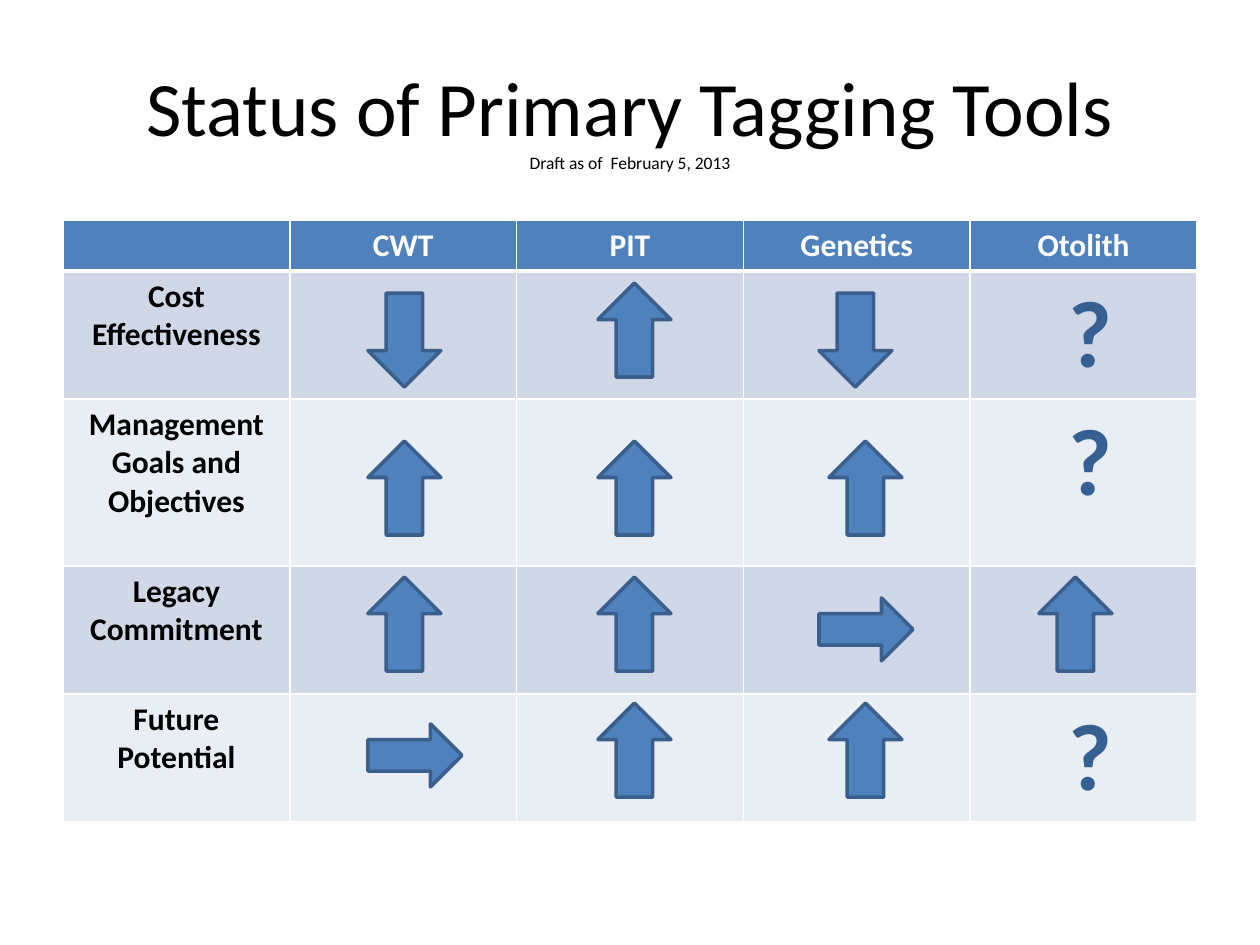
from lxml import etree
from pptx import Presentation
from pptx.dml.color import RGBColor
from pptx.enum.shapes import MSO_SHAPE
from pptx.enum.text import MSO_ANCHOR, MSO_AUTO_SIZE, PP_ALIGN
from pptx.oxml.ns import qn
from pptx.util import Pt

TITLE = "Status of Primary Tagging Tools"
DRAFT_NOTE = "Draft as of  February 5, 2013"
TOOLS = ["", "CWT", "PIT", "Genetics", "Otolith"]
STATUS = [
    ("Cost Effectiveness", ["down", "up", "down", "?"]),
    ("Management Goals and Objectives", ["up", "up", "up", "?"]),
    ("Legacy Commitment", ["up", "up", "right", "up"]),
    ("Future Potential", ["right", "up", "up", "?"]),
]

UP = MSO_SHAPE.UP_ARROW
DOWN = MSO_SHAPE.DOWN_ARROW
RIGHT = MSO_SHAPE.RIGHT_ARROW
CENTER = PP_ALIGN.CENTER
TOP = MSO_ANCHOR.TOP
MIDDLE = MSO_ANCHOR.MIDDLE
NO_AUTOFIT = MSO_AUTO_SIZE.NONE

BLACK = RGBColor(0x00, 0x00, 0x00)
WHITE = RGBColor(0xFF, 0xFF, 0xFF)
BLUE = RGBColor(0x4F, 0x81, 0xBD)
OUTLINE = RGBColor(0x3A, 0x5F, 0x8C)
QUESTION = RGBColor(0x37, 0x60, 0x92)
BANDS = [RGBColor(0xD0, 0xD8, 0xE8), RGBColor(0xE9, 0xED, 0xF4)]

FONT = "Calibri"
EMU_PER_PX = 914400 / 126
TABLE_LEFT, TABLE_TOP, TABLE_WIDTH = 63, 220, 1134
ROW_HEIGHTS = [51, 128, 167, 128, 128]
ARROW_LEFTS = [368, 598, 829, 1039]
ARROW_TOPS = [283, 441, 577, 703]
QUESTION_INDENT = 27
SIDEWAYS_SHIFT = {("Genetics", "down"): -10, ("Genetics", "right"): -10}
ARROWS = {
    "up": (UP, 73, 94, 0),
    "down": (DOWN, 73, 94, 10),
    "right": (RIGHT, 94, 63, 21),
}


def px(length):
    return round(length * EMU_PER_PX)


def style(run, size, color, bold=False):
    run.font.name = FONT
    run.font.size = Pt(size)
    run.font.bold = bold
    run.font.color.rgb = color


def add_borders(cell, bottom_width):
    properties = cell._tc.get_or_add_tcPr()
    widths = [("a:lnL", 1), ("a:lnR", 1), ("a:lnT", 1), ("a:lnB", bottom_width)]
    for position, (side, width) in enumerate(widths):
        border = etree.Element(qn(side), w=str(Pt(width)))
        fill = etree.SubElement(border, qn("a:solidFill"))
        etree.SubElement(fill, qn("a:srgbClr"), val=str(WHITE))
        properties.insert(position, border)


def fill_cell(cell, text, fill, size, color, bottom_width=1):
    cell.fill.solid()
    cell.fill.fore_color.rgb = fill
    cell.vertical_anchor = TOP
    add_borders(cell, bottom_width)
    if text:
        paragraph = cell.text_frame.paragraphs[0]
        paragraph.text = text
        paragraph.alignment = CENTER
        style(paragraph.runs[0], size, color, bold=True)


def add_title(slide):
    title = slide.shapes.title
    title.left, title.top, title.width, title.height = map(px, (63, 38, 1134, 157))
    frame = title.text_frame
    frame.auto_size = NO_AUTOFIT
    frame.vertical_anchor = MIDDLE
    heading = frame.paragraphs[0]
    heading.text = f"{TITLE}\v{DRAFT_NOTE}"
    heading.alignment = CENTER
    for run, size in zip(heading.runs, (44, 10)):
        style(run, size, BLACK)


def add_status_table(slide):
    table = slide.shapes.add_table(
        len(STATUS) + 1, len(TOOLS), px(TABLE_LEFT), px(TABLE_TOP),
        px(TABLE_WIDTH), px(sum(ROW_HEIGHTS))).table
    for column in table.columns:
        column.width = px(TABLE_WIDTH / len(TOOLS))
    for row, height in zip(table.rows, ROW_HEIGHTS):
        row.height = px(height)
    for col, tool in enumerate(TOOLS):
        fill_cell(table.cell(0, col), tool, BLUE, 18, WHITE, bottom_width=3)
    for row, (criterion, ratings) in enumerate(STATUS, start=1):
        band = BANDS[(row - 1) % 2]
        fill_cell(table.cell(row, 0), criterion, band, 18, BLACK)
        for col, rating in enumerate(ratings, start=1):
            cell = table.cell(row, col)
            unknown = rating == "?"
            fill_cell(cell, rating if unknown else "", band, 54, QUESTION)
            if unknown:
                cell.margin_left = px(QUESTION_INDENT)


def add_arrow(slide, direction, left, top):
    preset, width, height, drop = ARROWS[direction]
    arrow = slide.shapes.add_shape(
        preset, px(left), px(top + drop), px(width), px(height))
    arrow.shadow.inherit = False
    arrow.fill.solid()
    arrow.fill.fore_color.rgb = BLUE
    arrow.line.color.rgb = OUTLINE
    arrow.line.width = Pt(2)


def main():
    deck = Presentation()
    deck.slide_width, deck.slide_height = px(1260), px(945)
    slide = deck.slides.add_slide(deck.slide_layouts[5])
    add_title(slide)
    add_status_table(slide)
    for (_, ratings), top in zip(STATUS, ARROW_TOPS):
        for tool, rating, left in zip(TOOLS[1:], ratings, ARROW_LEFTS):
            if rating in ARROWS:
                shift = SIDEWAYS_SHIFT.get((tool, rating), 0)
                add_arrow(slide, rating, left + shift, top)
    deck.save("out.pptx")


if __name__ == "__main__":
    main()
